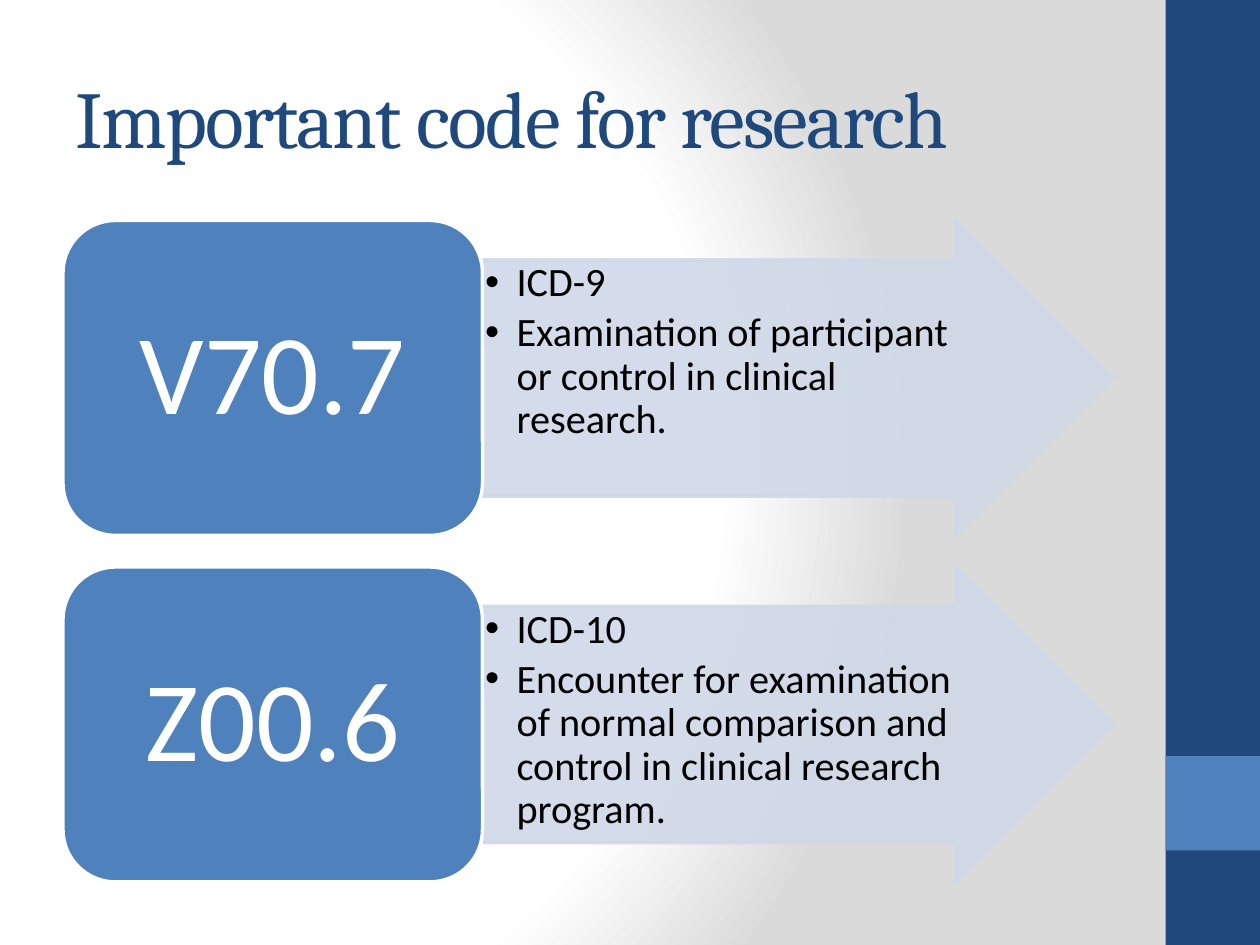
from lxml import etree
from pptx import Presentation
from pptx.dml.color import RGBColor
from pptx.enum.shapes import MSO_SHAPE
from pptx.enum.text import MSO_ANCHOR, MSO_AUTO_SIZE, PP_ALIGN
from pptx.oxml import parse_xml
from pptx.oxml.ns import nsdecls, qn
from pptx.util import Inches, Pt

RECT = MSO_SHAPE.RECTANGLE
ROUND_RECT = MSO_SHAPE.ROUNDED_RECTANGLE
RIGHT_ARROW = MSO_SHAPE.RIGHT_ARROW
TOP, MIDDLE = MSO_ANCHOR.TOP, MSO_ANCHOR.MIDDLE
LEFT, CENTER = PP_ALIGN.LEFT, PP_ALIGN.CENTER
NO_AUTOFIT = MSO_AUTO_SIZE.NONE

COLORS = {
    "navy": "1F497D",
    "blue": "4F81BD",
    "pale": "D0D8E8",
    "white": "FFFFFF",
    "gray": "DADADA",
    "black": "000000",
}
CODES = [
    ("V70.7", ["ICD-9", "Examination of participant or control in clinical research."]),
    ("Z00.6", ["ICD-10", "Encounter for examination of normal comparison and "
                         "control in clinical research program."]),
]
ROW_TOP, ROW_STEP, ROW_HEIGHT = 1.75, 2.75, 2.5
CARD_LEFT, CARD_WIDTH, ARROW_WIDTH = 0.5, 3.33, 5


def rgb(name):
    return RGBColor.from_string(COLORS[name])


def set_background(slide):
    stops = "".join(
        f'<a:gs pos="{percent * 1000}"><a:srgbClr val="{COLORS[color]}"/></a:gs>'
        for percent, color in [(0, "white"), (75, "white"), (100, "gray")]
    )
    background = parse_xml(
        f'<p:bg {nsdecls("p", "a")}><p:bgPr><a:gradFill rotWithShape="1">'
        f"<a:gsLst>{stops}</a:gsLst>"
        '<a:path path="circle"><a:fillToRect l="20000" t="50000" r="100000" b="50000"/></a:path>'
        "</a:gradFill><a:effectLst/></p:bgPr></p:bg>"
    )
    slide.element.cSld.insert(0, background)


def set_opacity(shape, percent):
    for color in shape.element.spPr.iter(qn("a:srgbClr")):
        etree.SubElement(color, qn("a:alpha")).set("val", str(percent * 1000))


def add_block(slide, kind, box, fill, line=None, adjustments=()):
    block = slide.shapes.add_shape(kind, *map(Inches, box))
    block.shadow.inherit = False
    block.fill.solid()
    block.fill.fore_color.rgb = rgb(fill)
    if line:
        block.line.color.rgb = rgb(line)
        block.line.width = Pt(2)
    else:
        block.line.fill.background()
    for index, value in enumerate(adjustments):
        block.adjustments[index] = value
    return block


def add_bullet(paragraph):
    properties = paragraph._p.get_or_add_pPr()
    properties.set("marL", str(Inches(0.25)))
    properties.set("indent", str(-Inches(0.25)))
    etree.SubElement(properties, qn("a:buFont")).set("typeface", "Arial")
    etree.SubElement(properties, qn("a:buChar")).set("char", "•")


def write_text(frame, lines, *, size, color, font="Calibri", align=LEFT, anchor=TOP,
               inset=(0.1, 0.05), line_spacing=None, after=0, bullets=False, tracking=None):
    frame.word_wrap = True
    frame.auto_size = NO_AUTOFIT
    frame.vertical_anchor = anchor
    frame.margin_left = frame.margin_right = Inches(inset[0])
    frame.margin_top = frame.margin_bottom = Inches(inset[1])
    for index, line in enumerate(lines):
        paragraph = frame.add_paragraph() if index else frame.paragraphs[0]
        paragraph.alignment = align
        paragraph.space_after = Pt(after)
        if line_spacing:
            paragraph.line_spacing = line_spacing
        if bullets:
            paragraph.level = 1
            add_bullet(paragraph)
        run = paragraph.add_run()
        run.text = line
        run.font.name = font
        run.font.size = Pt(size)
        run.font.color.rgb = rgb(color)
        if tracking:
            run.font._element.set("spc", str(tracking * 100))


def add_text(slide, box, lines, **style):
    text_box = slide.shapes.add_textbox(*map(Inches, box))
    write_text(text_box.text_frame, lines, **style)


def add_title(slide, text):
    title = slide.shapes.title
    title.left, title.top, title.width, title.height = map(Inches, (0.5, 0.3, 8.33, 1.25))
    write_text(title.text_frame, [text], size=46, color="navy", font="Cambria",
               anchor=MIDDLE, tracking=-1)


def add_code_row(slide, top, code, details):
    arrow_left = CARD_LEFT + CARD_WIDTH
    arrow = add_block(slide, RIGHT_ARROW, (arrow_left, top, ARROW_WIDTH, ROW_HEIGHT),
                      "pale", "pale", (0.75, 0.5))
    set_opacity(arrow, 90)
    add_text(slide, (arrow_left, top + 0.31, 4.06, 1.87), details, size=23, color="black",
             inset=(0.02, 0.02), line_spacing=0.9, after=3.7, bullets=True)
    add_block(slide, ROUND_RECT, (CARD_LEFT, top, CARD_WIDTH, ROW_HEIGHT), "blue", "white")
    add_text(slide, (CARD_LEFT + 0.12, top + 0.12, CARD_WIDTH - 0.24, ROW_HEIGHT - 0.24),
             [code], size=65, color="white", align=CENTER, anchor=MIDDLE,
             inset=(0.27, 0.14), line_spacing=0.9)


def main():
    deck = Presentation()
    deck.slide_width, deck.slide_height = Inches(10), Inches(7.5)
    slide = deck.slides.add_slide(deck.slide_layouts[5])
    set_background(slide)
    add_block(slide, RECT, (9.25, 0, 0.75, 7.5), "navy")
    add_block(slide, RECT, (9.25, 6, 0.75, 0.75), "blue")
    add_title(slide, "Important code for research")
    for row, (code, details) in enumerate(CODES):
        add_code_row(slide, ROW_TOP + row * ROW_STEP, code, details)
    deck.save("out.pptx")


if __name__ == "__main__":
    main()
